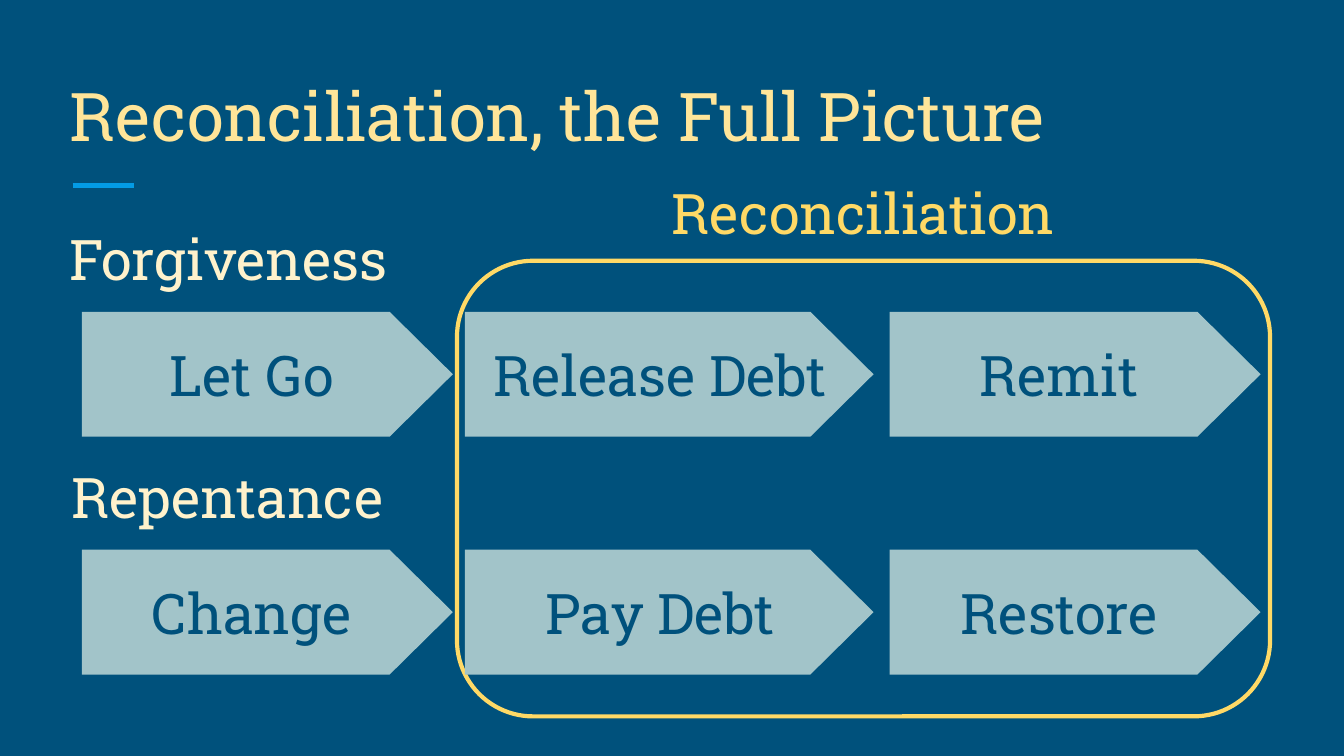
from lxml.etree import SubElement
from pptx import Presentation
from pptx.dml.color import RGBColor
from pptx.enum.shapes import MSO_CONNECTOR, MSO_SHAPE
from pptx.enum.text import MSO_ANCHOR, MSO_AUTO_SIZE, PP_ALIGN
from pptx.oxml.ns import qn
from pptx.util import Inches, Pt

NAVY, GOLD, CREAM = "00517C", "FFD966", "FFF2CC"
FRAME = {
    "word_wrap": True,
    "auto_size": MSO_AUTO_SIZE.NONE,
    "margin_left": Inches(0.1),
    "margin_right": Inches(0.1),
    "margin_top": Inches(0.1),
    "margin_bottom": Inches(0.1),
}
# Left and width of the three arrow columns
COLS = [(0.61, 2.76), (3.46, 3.04), (6.62, 2.76)]
# Heading, its left and top, top of the arrows, arrow labels
ROWS = [
    ("Forgiveness", 0.42, 1.52, 2.32, ["Let Go", " Release Debt", "Remit"]),
    ("Repentance", 0.43, 3.29, 4.09, ["Change", " Pay Debt", "Restore"]),
]


def color(code):
    return RGBColor.from_string(code)


def box(*sides):
    return [Inches(side) for side in sides]


def write(shape, text, hue, size=30, align=PP_ALIGN.LEFT,
          anchor=MSO_ANCHOR.BOTTOM):
    frame = shape.text_frame
    for name, value in {**FRAME, "vertical_anchor": anchor}.items():
        setattr(frame, name, value)
    para = frame.paragraphs[0]
    para.alignment = align
    run = para.add_run()
    run.text = text
    for name, value in {"name": "Roboto Slab", "size": Pt(size)}.items():
        setattr(run.font, name, value)
    run.font.color.rgb = color(hue)


def add_title(slide, text):
    title = slide.shapes.title
    title.left, title.top, title.width, title.height = box(0.42, 0.5, 9.15, 0.75)
    write(title, text, "FFE599", 36)


def add_label(slide, text, place, hue, **style):
    write(slide.shapes.add_textbox(*box(*place)), text, hue, **style)


def add_rule(slide):
    rule = slide.shapes.add_connector(
        MSO_CONNECTOR.STRAIGHT, *box(0.54, 1.38, 1, 1.38))
    rule.line.color.rgb = color("039BE5")
    rule.line.width = Pt(3)
    SubElement(rule._element.spPr, qn("a:effectLst"))


def add_frame(slide):
    frame = slide.shapes.add_shape(
        MSO_SHAPE.ROUNDED_RECTANGLE, *box(3.4, 1.94, 6.05, 3.39))
    frame.adjustments[0] = 0.167
    frame.shadow.inherit = False
    frame.fill.background()
    frame.line.color.rgb = color(GOLD)
    frame.line.width = Pt(2.25)


def add_arrow(group, text, left, top, width):
    arrow = group.shapes.add_shape(
        MSO_SHAPE.PENTAGON, *box(left, top, width, 0.93))
    arrow.adjustments[0] = 0.506
    arrow.shadow.inherit = False
    arrow.fill.solid()
    arrow.fill.fore_color.rgb = color("A2C4C9")
    arrow.line.fill.background()
    write(arrow, text, NAVY, align=PP_ALIGN.CENTER, anchor=MSO_ANCHOR.MIDDLE)


def main():
    # Widescreen, 16 to 9
    deck = Presentation()
    deck.slide_width, deck.slide_height = box(10, 10 * 9 / 16)
    slide = deck.slides.add_slide(deck.slide_layouts[5])
    slide.background.fill.solid()
    slide.background.fill.fore_color.rgb = color(NAVY)

    # Title and accent rule
    add_title(slide, "Reconciliation, the Full Picture")
    add_rule(slide)

    # Outline around the shared steps
    add_frame(slide)

    # One heading and one group of arrows per row
    for head, left, top, level, steps in ROWS:
        add_label(slide, head, (left, top, 9.15, 0.75), CREAM)
        group = slide.shapes.add_group_shape()
        for step, (start, width) in zip(steps, COLS):
            add_arrow(group, step, start, level, width)

    # Caption of the outline
    add_label(slide, "Reconciliation", (4.49, 1.23, 3.87, 0.71), GOLD,
              align=PP_ALIGN.CENTER, anchor=MSO_ANCHOR.TOP)
    deck.save("out.pptx")


if __name__ == "__main__":
    main()
